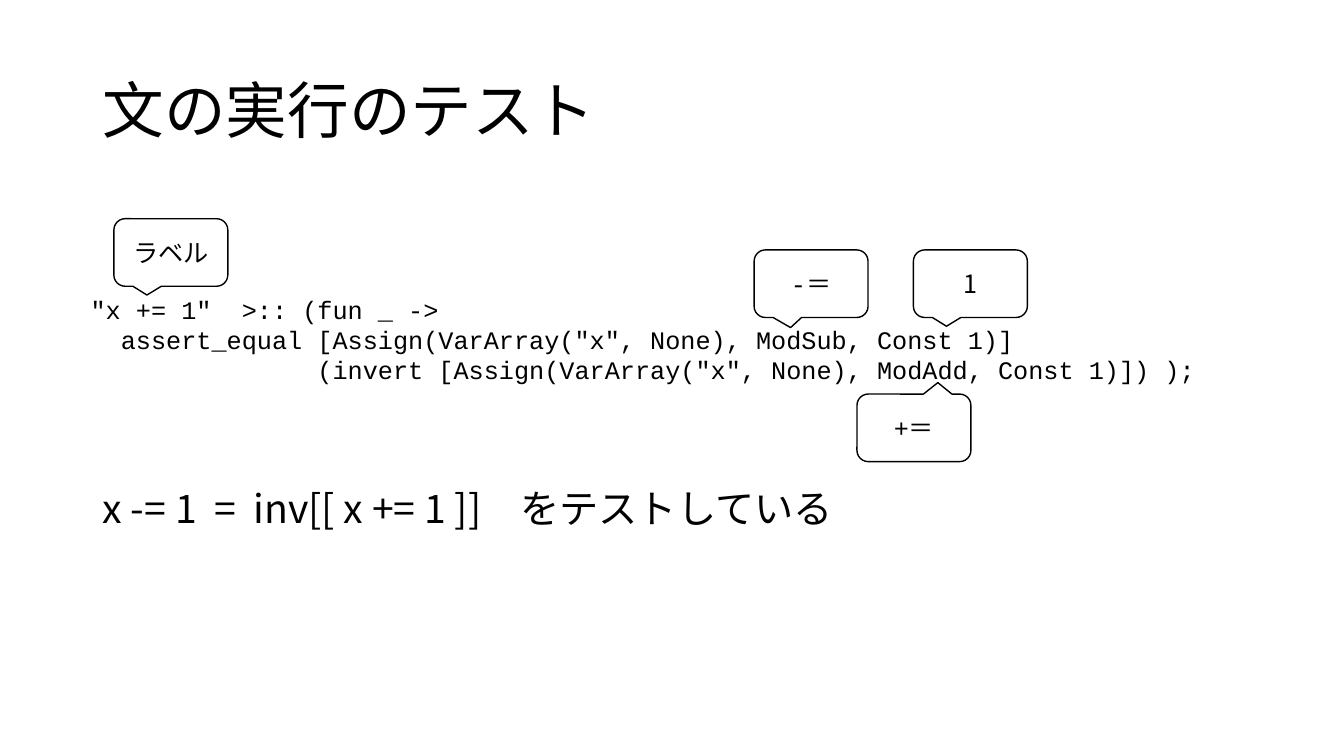
from pptx import Presentation
from pptx import util as u
from pptx.dml.color import RGBColor
from pptx.enum import shapes, text
from pptx.oxml import ns
from lxml import etree

COLORS = {"ink": "000000", "paper": "FFFFFF"}
SANS, MONO = "Noto Sans CJK JP", "Courier New"
CODE_SIZE = 18
CHAR_WIDTH = 0.15  # one Courier New character at 18 pt, in inches

# Code lines: indent in characters, wording
CODE = [
    (0, '"x += 1"  >:: (fun _ ->'),
    (2, 'assert_equal [Assign(VarArray("x", None), ModSub, Const 1)]'),
    (15, '(invert [Assign(VarArray("x", None), ModAdd, Const 1)]) );'),
]

# Callouts: wording, font, left, top, pointer tip
CALLOUT_SIZE = (1.13, 0.67)
CALLOUTS = [
    ("ラベル", SANS, 1.13, 2.17, (-0.21, 0.63)),
    ("1", SANS, 9.06, 2.48, (-0.21, 0.63)),
    ("-＝", MONO, 7.48, 2.48, (-0.18, 0.65)),
    ("+＝", MONO, 8.5, 3.91, (0.21, -0.67)),
]


def color(name):
    return RGBColor.from_string(COLORS[name])


def write(paragraph, wording, size, font, **paragraph_format):
    run = paragraph.add_run()
    run.text = wording
    for key, value in {"size": u.Pt(size), "name": font}.items():
        setattr(run.font, key, value)
    run.font.color.rgb = color("ink")
    east_asian = etree.SubElement(run.font._element, ns.qn("a:ea"))
    east_asian.set("typeface", SANS)
    for key, value in paragraph_format.items():
        setattr(paragraph, key, value)


def add_frame(slide, box, anchor):
    frame = slide.shapes.add_textbox(*map(u.Inches, box)).text_frame
    for key, value in {"word_wrap": True, "vertical_anchor": anchor}.items():
        setattr(frame, key, value)
    return frame


def add_line(slide, box, wording, size, anchor, **paragraph_format):
    frame = add_frame(slide, box, anchor)
    write(frame.paragraphs[0], wording, size, SANS,
          line_spacing=0.9, **paragraph_format)


def add_code(slide, box):
    frame = add_frame(slide, box, text.MSO_ANCHOR.TOP)
    for number, (indent, wording) in enumerate(CODE):
        line = frame.add_paragraph() if number else frame.paragraphs[0]
        write(line, wording, CODE_SIZE, MONO)
        margin = u.Inches(indent * CHAR_WIDTH)
        line._p.get_or_add_pPr().set("marL", str(int(margin)))


def add_callout(slide, box, wording, font, tip):
    callout = slide.shapes.add_shape(
        shapes.MSO_SHAPE.ROUNDED_RECTANGULAR_CALLOUT, *map(u.Inches, box))
    callout.shadow.inherit = False
    callout.adjustments[0], callout.adjustments[1] = tip
    callout.fill.solid()
    callout.fill.fore_color.rgb = color("paper")
    callout.line.color.rgb = color("ink")
    callout.line.width = u.Pt(1)
    frame = callout.text_frame
    frame.vertical_anchor = text.MSO_ANCHOR.MIDDLE
    write(frame.paragraphs[0], wording, CODE_SIZE, font,
          alignment=text.PP_ALIGN.CENTER)


def main():
    deck = Presentation()
    deck.slide_width, deck.slide_height = u.Inches(13.33), u.Inches(7.5)
    slide = deck.slides.add_slide(deck.slide_layouts[6])

    # Title and explanation
    add_line(slide, (0.92, 0.4, 11.5, 1.45), "文の実行のテスト", 44,
             text.MSO_ANCHOR.MIDDLE)
    add_line(slide, (0.92, 4.81, 11.5, 1.94),
             "x -= 1  =  inv[[ x += 1 ]] 　をテストしている".replace("] 　", "]　"),
             28, text.MSO_ANCHOR.TOP, space_before=u.Pt(10))

    # Test code with its callouts
    add_code(slide, (0.8, 2.87, 11.5, 1.31))
    for wording, font, left, top, tip in CALLOUTS:
        add_callout(slide, (left, top, *CALLOUT_SIZE), wording, font, tip)

    deck.save("out.pptx")


if __name__ == "__main__":
    main()
